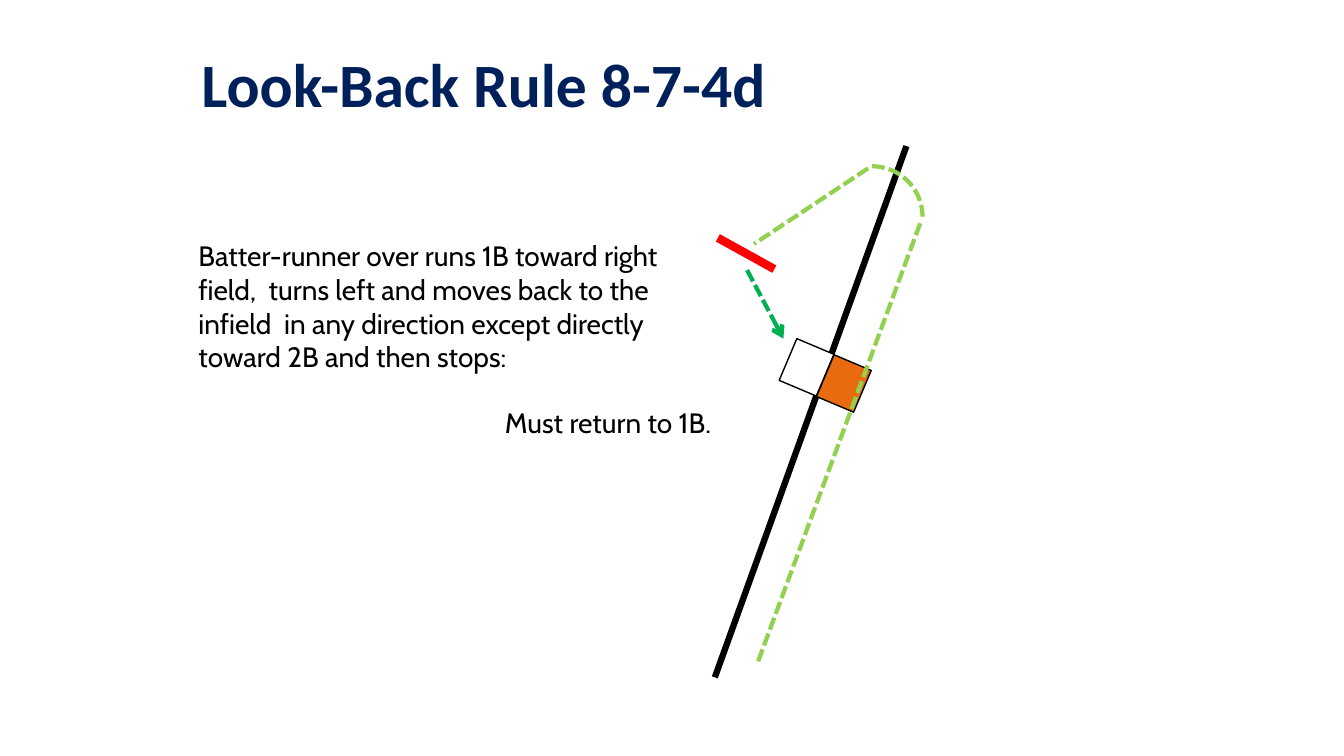
from math import cos, pi, sin

from lxml import etree
from pptx import Presentation
from pptx.dml.color import RGBColor
from pptx.enum.dml import MSO_LINE
from pptx.enum.shapes import MSO_CONNECTOR, MSO_SHAPE
from pptx.enum.text import MSO_ANCHOR
from pptx.oxml.ns import qn
from pptx.util import Emu, Pt

EMU_PER_PX = 9144  # 100 px to the inch
COLORS = {
    "title": "00205B",
    "black": "000000",
    "white": "FFFFFF",
    "orange": "E96B10",
    "path": "92D050",
    "stop": "FF0000",
    "return": "00B050",
}


def px(value):
    return Emu(round(value * EMU_PER_PX))


def rgb(name):
    return RGBColor.from_string(COLORS[name])


def style_line(line, color, width, dashed=False):
    line.color.rgb = rgb(color)
    line.width = Pt(width)
    if dashed:
        line.dash_style = MSO_LINE.SQUARE_DOT


def add_text(slide, box, text, font, size, color="black", bold=False, wrap=True):
    sp = slide.shapes.add_textbox(*map(px, box))
    tf = sp.text_frame
    tf.word_wrap = wrap
    tf.text = text
    r = tf.paragraphs[0].runs[0]
    r.font.name = font
    r.font.size = Pt(size)
    r.font.bold = bold
    r.font.color.rgb = rgb(color)
    return tf


def add_line(slide, start, end, color, width, dashed=False, arrow=False):
    cn = slide.shapes.add_connector(MSO_CONNECTOR.STRAIGHT, *map(px, start + end))
    style_line(cn.line, color, width, dashed)
    if arrow:
        ln = cn.line._get_or_add_ln()
        etree.SubElement(ln, qn("a:tailEnd"), type="arrow")
    etree.SubElement(cn._element.spPr, qn("a:effectLst"))


def add_base(slide, left, top, fill):
    sp = slide.shapes.add_shape(MSO_SHAPE.RECTANGLE, *map(px, (left, top, 40, 45)))
    sp.rotation = 22.9
    sp.shadow.inherit = False
    sp.fill.solid()
    sp.fill.fore_color.rgb = rgb(fill)
    style_line(sp.line, "black", 1)


def add_turn(slide, center_x, center_y, radius, steps=24):
    """Quarter circle from the top round to the right."""
    angles = [pi / 2 * i / steps for i in range(steps + 1)]
    points = [(px(center_x + radius * sin(a)), px(center_y - radius * cos(a)))
              for a in angles]
    builder = slide.shapes.build_freeform(*points[0])
    builder.add_line_segments(points[1:], close=False)
    sp = builder.convert_to_shape()
    sp.shadow.inherit = False
    sp.fill.background()
    style_line(sp.line, "path", 3, dashed=True)


def main():
    prs = Presentation()
    prs.slide_width, prs.slide_height = px(1333), px(750)
    slide = prs.slides.add_slide(prs.slide_layouts[6])

    # Title
    tf = add_text(slide, (190, 19, 958, 136), "Look-Back Rule 8-7-4d",
                  "Calibri", 44, "title", bold=True)
    tf.vertical_anchor = MSO_ANCHOR.MIDDLE
    tf.paragraphs[0].line_spacing = 0.9

    # Foul line and double first base
    add_line(slide, (709, 672), (899, 145), "black", 4.5)
    add_base(slide, 780, 342, "white")
    add_base(slide, 817, 358, "orange")

    # Run past first base
    add_line(slide, (752, 656), (914, 218), "path", 3, dashed=True)

    # Ruling
    add_text(slide, (187, 232, 517, 145),
             "Batter-runner over runs 1B toward right field,  turns left and moves "
             "back to the infield  in any direction except directly toward 2B and "
             "then stops:", "Cabin", 20)
    add_text(slide, (491, 397, 231, 44), "Must return to 1B.", "Cabin", 20, wrap=False)

    # Stop mark, left turn and return to base
    add_line(slide, (712, 236), (768, 267), "stop", 6)
    add_turn(slide, 865, 215, 50)
    add_line(slide, (861, 167), (748, 242), "path", 3, dashed=True)
    add_line(slide, (741, 268), (777, 336), "return", 3, dashed=True, arrow=True)

    prs.save("out.pptx")


if __name__ == "__main__":
    main()
